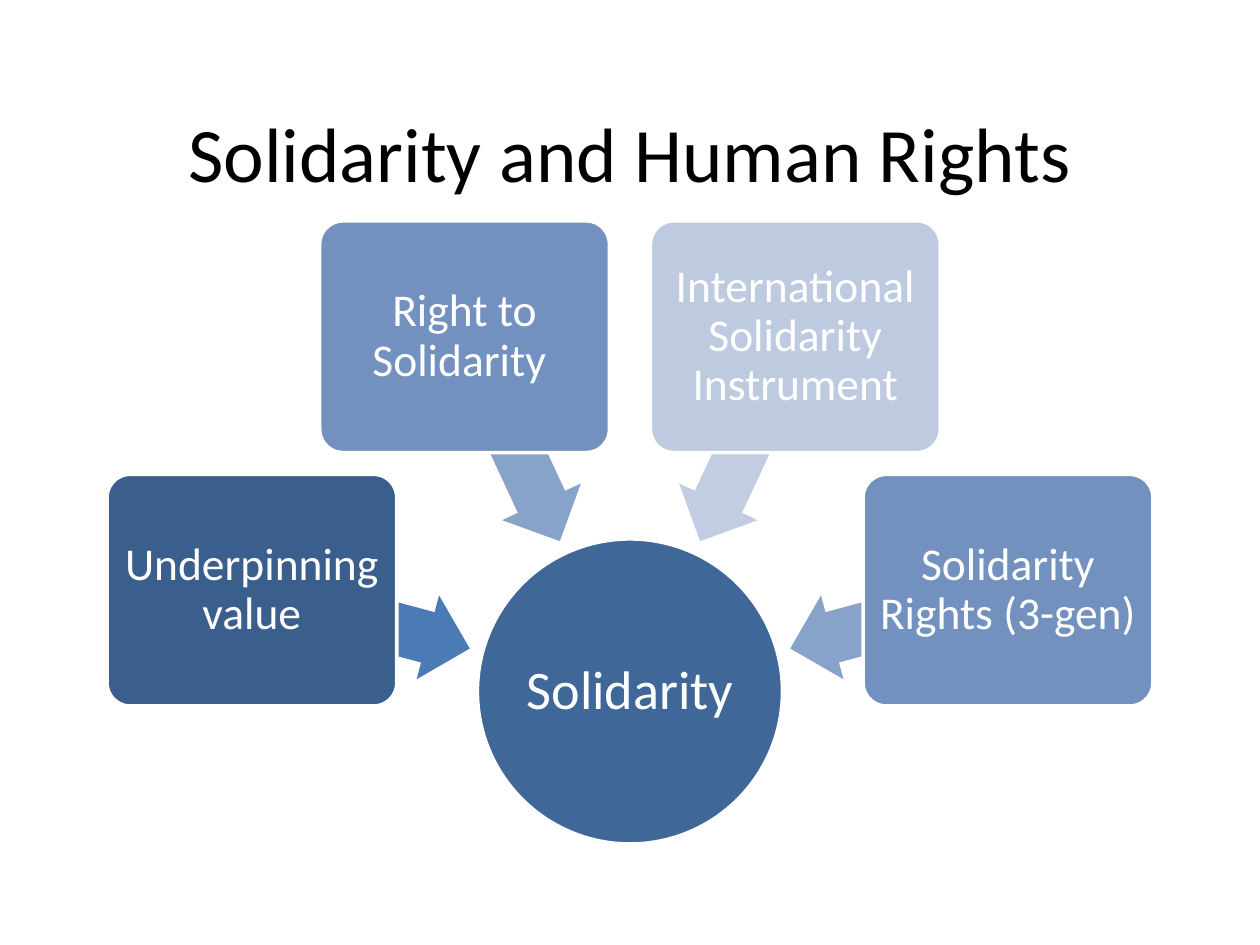
import math

from pptx import Presentation
from pptx import util as u
from pptx.dml.color import RGBColor
from pptx.enum import shapes, text

COLOURS = {
    "black": "000000", "white": "FFFFFF", "hub": "3F6797",
    "dark": "3A5F8C", "dark arrow": "4B7BB5",
    "middle": "7391BF", "middle arrow": "88A3CA",
    "light": "BECADF", "light arrow": "C2CDE1",
}
HUB_X, HUB_Y, HUB_SIZE = 12.7, 13.94, 6.15
BOX_RADIUS, ARROW_RADIUS = 7.89, 5.63

presentation = Presentation()
presentation.slide_width, presentation.slide_height = u.Cm(25.4), u.Cm(19.05)
slide = presentation.slides.add_slide(presentation.slide_layouts[6])


def add_centred(kind, x, y, width, height, fill, outlined=True):
    """Add a filled shape whose middle is at x, y, in centimetres."""
    shape = slide.shapes.add_shape(
        kind, u.Cm(x - width / 2), u.Cm(y - height / 2), u.Cm(width), u.Cm(height))
    shape.shadow.inherit = False
    shape.fill.solid()
    shape.fill.fore_color.rgb = RGBColor.from_string(COLOURS[fill])
    if outlined:
        shape.line.color.rgb = RGBColor.from_string(COLOURS["white"])
        shape.line.width = u.Pt(2)
    else:
        shape.line.fill.background()
    return shape


def write(shape, wording, size, colour, inset, spacing=1.0):
    frame = shape.text_frame
    frame.word_wrap = True
    frame.vertical_anchor = text.MSO_ANCHOR.MIDDLE
    frame.margin_left = frame.margin_right = u.Cm(inset)
    frame.margin_top = frame.margin_bottom = u.Cm(inset)
    paragraph = frame.paragraphs[0]
    paragraph.text = wording
    paragraph.alignment = text.PP_ALIGN.CENTER
    paragraph.line_spacing = spacing
    paragraph.font.name = "Calibri"
    paragraph.font.size = u.Pt(size)
    paragraph.font.color.rgb = RGBColor.from_string(COLOURS[colour])


title = slide.shapes.add_textbox(u.Cm(1.27), u.Cm(1.47), u.Cm(22.86), u.Cm(3.18))
write(title, "Solidarity and Human Rights", 44, "black", 0.2)

hub = add_centred(shapes.MSO_SHAPE.OVAL, HUB_X, HUB_Y, HUB_SIZE, HUB_SIZE, "hub")
write(hub, "Solidarity", 31, "white", 0.05, 0.9)

# Angles run clockwise from the left of the hub
aspects = [
    (15, "Underpinning value", "dark"),
    (65, "Right to Solidarity ", "middle"),
    (115, "International Solidarity Instrument", "light"),
    (165, "Solidarity Rights (3-gen)", "middle"),
]
for angle, wording, tone in aspects:
    across, up = math.cos(math.radians(angle)), math.sin(math.radians(angle))

    arrow = add_centred(
        shapes.MSO_SHAPE.LEFT_ARROW, HUB_X - ARROW_RADIUS * across,
        HUB_Y - ARROW_RADIUS * up, 4.57, 1.75, f"{tone} arrow", outlined=False)
    arrow.adjustments[0], arrow.adjustments[1] = 0.6, 0.5
    arrow.rotation = 180 + angle

    box = add_centred(
        shapes.MSO_SHAPE.ROUNDED_RECTANGLE, HUB_X - BOX_RADIUS * across,
        HUB_Y - BOX_RADIUS * up, 5.84, 4.67, tone)
    box.adjustments[0] = 0.1
    write(box, wording, 26, "white", 0.13, 0.9)

presentation.save("out.pptx")
